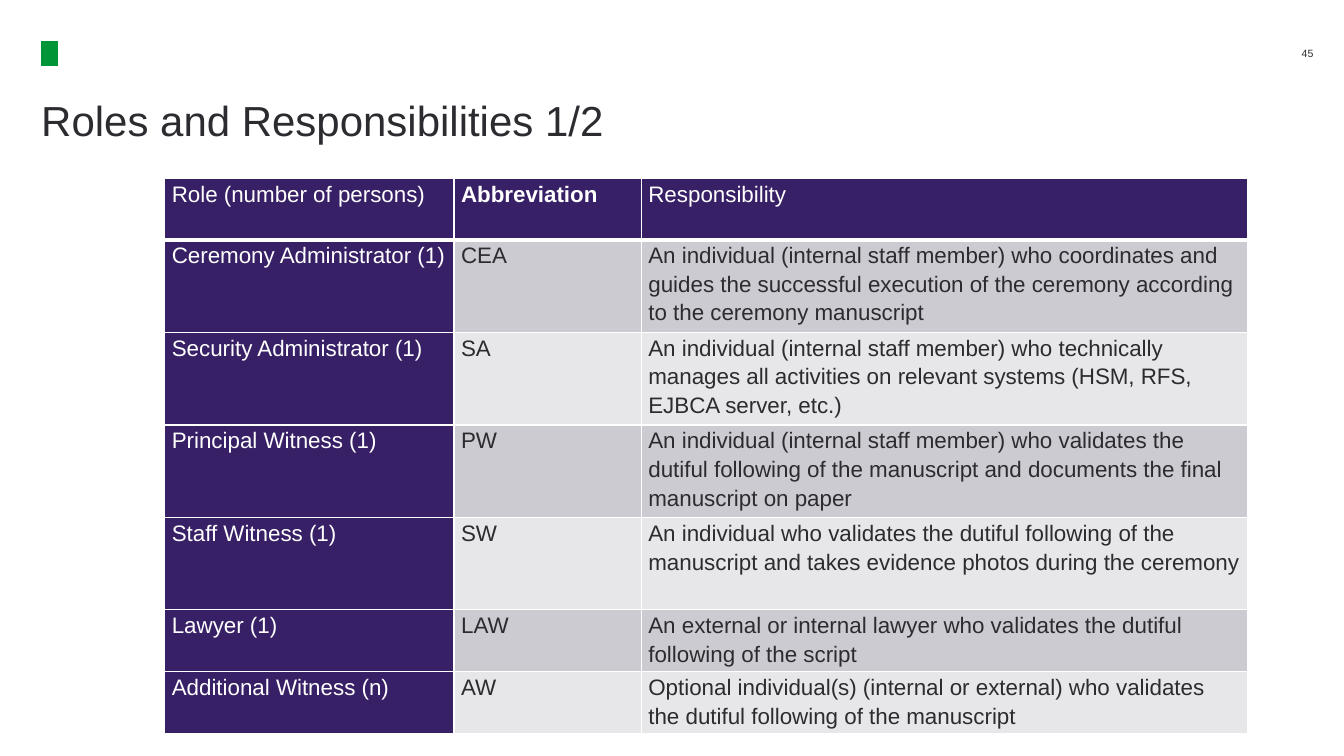
import pptx
import pptx.dml.color
import pptx.enum.shapes
import pptx.enum.text
import pptx.oxml
import pptx.oxml.ns
import pptx.util
from pptx.util import Cm

PURPLE = "372065"
DARK = "2C2C30"
WHITE = "FFFFFF"
GREEN = "009638"
BANDS = ["CCCBD2", "E7E7EA"]

HEADER = ["Role (number of persons)", "Abbreviation", "Responsibility"]
ROLES = [
    ["Ceremony Administrator (1)", "CEA",
     "An individual (internal staff member) who coordinates and guides the successful "
     "execution of the ceremony according to the ceremony manuscript"],
    ["Security Administrator (1)", "SA",
     "An individual (internal staff member) who technically manages all activities on "
     "relevant systems (HSM, RFS, EJBCA server, etc.)"],
    ["Principal Witness (1)", "PW",
     "An individual (internal staff member) who validates the dutiful following of the "
     "manuscript and documents the final manuscript on paper"],
    ["Staff Witness (1)", "SW",
     "An individual who validates the dutiful following of the manuscript and takes "
     "evidence photos during the ceremony"],
    ["Lawyer (1)", "LAW",
     "An external or internal lawyer who validates the dutiful following of the script"],
    ["Additional Witness (n)", "AW",
     "Optional individual(s) (internal or external) who validates the dutiful following "
     "of the manuscript"],
]
COLUMN_WIDTHS = [7.29, 4.72, 15.29]
SHORT_ROW, TALL_ROW = 1.54, 2.32
ROW_HEIGHTS = [SHORT_ROW] + [TALL_ROW] * 4 + [SHORT_ROW] * 2


def color(value):
    return pptx.dml.color.RGBColor.from_string(value)


class SlideBuilder:
    font_name = "Arial"

    def __init__(self, slide):
        self.slide = slide

    def format_text(self, text_frame, size, text_color, bold=False, spacing=1.0,
                    alignment=pptx.enum.text.PP_ALIGN.LEFT):
        for paragraph in text_frame.paragraphs:
            paragraph.alignment = alignment
            paragraph.line_spacing = spacing
            for run in paragraph.runs:
                run.font.name = self.font_name
                run.font.size = pptx.util.Pt(size)
                run.font.bold = bold
                run.font.color.rgb = color(text_color)

    def text(self, content, left, top, width, height, size,
             anchor=pptx.enum.text.MSO_ANCHOR.TOP, **style):
        shape = self.slide.shapes.add_textbox(Cm(left), Cm(top), Cm(width), Cm(height))
        frame = shape.text_frame
        frame.word_wrap = True
        frame.vertical_anchor = anchor
        frame.margin_left = frame.margin_right = frame.margin_top = frame.margin_bottom = 0
        frame.text = content
        self.format_text(frame, size, DARK, **style)

    def block(self, left, top, width, height, fill):
        shape = self.slide.shapes.add_shape(
            pptx.enum.shapes.MSO_SHAPE.RECTANGLE, Cm(left), Cm(top), Cm(width), Cm(height))
        shape.shadow.inherit = False
        shape.fill.solid()
        shape.fill.fore_color.rgb = color(fill)
        shape.line.fill.background()

    def borders(self, cell, widths):
        properties = cell._tc.get_or_add_tcPr()
        for index, (side, width) in enumerate(widths.items()):
            line = pptx.oxml.parse_xml(
                f'<a:{side} {pptx.oxml.ns.nsdecls("a")} w="{pptx.util.Pt(width)}">'
                f'<a:solidFill><a:srgbClr val="{WHITE}"/></a:solidFill></a:{side}>')
            properties.insert(index, line)

    def cell(self, cell, content, fill, text_color, bold, widths):
        cell.fill.solid()
        cell.fill.fore_color.rgb = color(fill)
        cell.margin_left = cell.margin_right = Cm(0.18)
        cell.margin_top = cell.margin_bottom = 0
        cell.text = content
        self.format_text(cell.text_frame, 16, text_color, bold, 1.15)
        self.borders(cell, widths)

    def table(self, rows, left, top, column_widths, row_heights):
        table = self.slide.shapes.add_table(
            len(rows), len(column_widths), Cm(left), Cm(top),
            Cm(sum(column_widths)), Cm(sum(row_heights))).table
        table.first_row = table.horz_banding = False
        for column, width in zip(table.columns, column_widths):
            column.width = Cm(width)
        for row, height in zip(table.rows, row_heights):
            row.height = Cm(height)
        for row_index, row in enumerate(rows):
            for column_index, content in enumerate(row):
                is_header = row_index == 0
                is_label = is_header or column_index == 0
                widths = {"lnL": 1, "lnR": 1, "lnT": 3 if row_index == 1 else 1,
                          "lnB": 3 if is_header else 1}
                self.cell(table.cell(row_index, column_index), content,
                          PURPLE if is_label else BANDS[(row_index - 1) % 2],
                          WHITE if is_label else DARK,
                          is_header and column_index == 1, widths)


def main():
    presentation = pptx.Presentation()
    presentation.slide_width = Cm(33.87)
    presentation.slide_height = Cm(19.05)
    builder = SlideBuilder(presentation.slides.add_slide(presentation.slide_layouts[6]))
    builder.block(1.04, 1.04, 0.42, 0.62, GREEN)
    builder.text("Roles and Responsibilities 1/2", 1.04, 2.26, 31.8, 3.43, 30, spacing=1.1)
    builder.text("45", 32.1, 1.04, 1, 0.62, 7.5,
                 anchor=pptx.enum.text.MSO_ANCHOR.MIDDLE,
                 alignment=pptx.enum.text.PP_ALIGN.RIGHT)
    builder.table([HEADER] + ROLES, 4.15, 4.5, COLUMN_WIDTHS, ROW_HEIGHTS)
    presentation.save("out.pptx")


if __name__ == "__main__":
    main()
